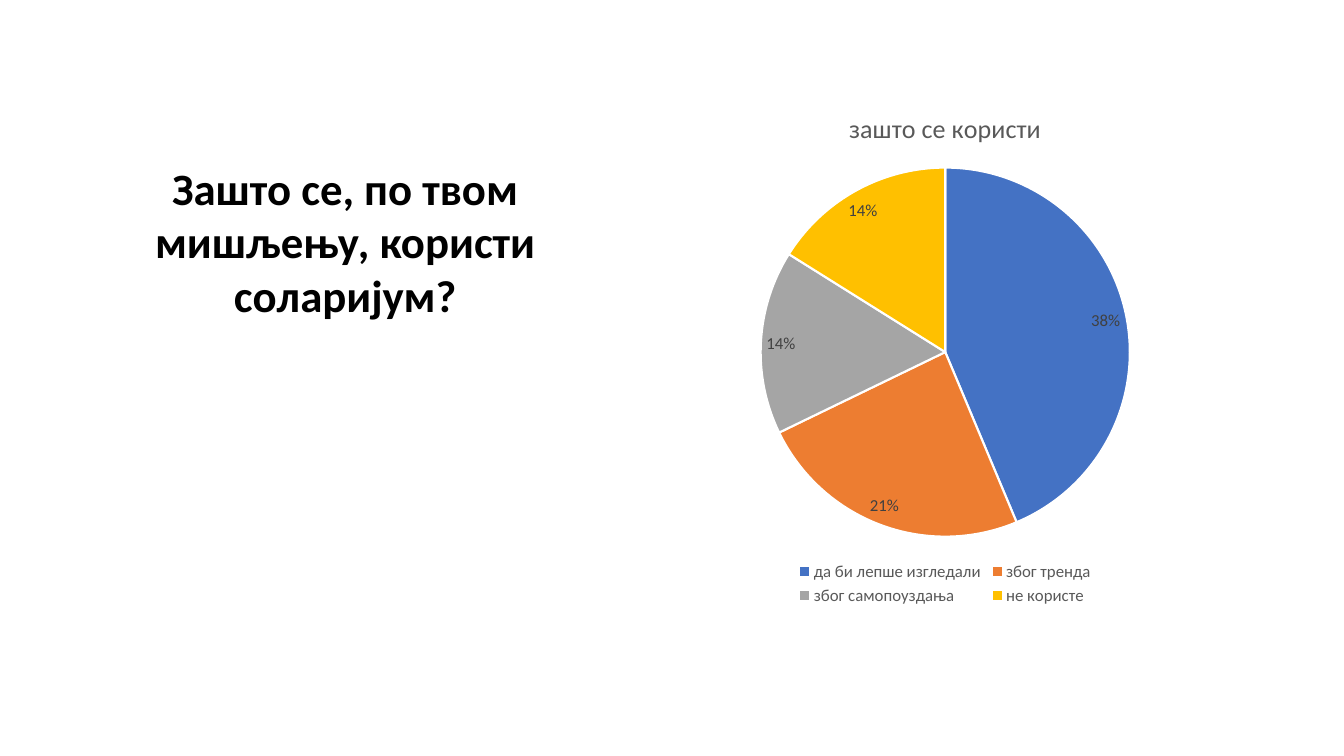
from pptx import Presentation
from pptx.chart.data import CategoryChartData
from pptx.dml.color import RGBColor
from pptx.enum.chart import XL_CHART_TYPE, XL_LABEL_POSITION, XL_LEGEND_POSITION
from pptx.enum.text import MSO_AUTO_SIZE, PP_ALIGN
from pptx.util import Inches, Pt

PIE = XL_CHART_TYPE.PIE
BEST_FIT = XL_LABEL_POSITION.BEST_FIT
BOTTOM = XL_LEGEND_POSITION.BOTTOM
CENTER = PP_ALIGN.CENTER
GROW = MSO_AUTO_SIZE.SHAPE_TO_FIT_TEXT

FONT = "Calibri"
COLORS = {
    "question": "000000",
    "caption": "595959",
    "percent": "404040",
    "white": "FFFFFF",
}
REASONS = [
    ("да би лепше изгледали", 0.38, "4472C4"),
    ("због тренда", 0.21, "ED7D31"),
    ("због самопоуздања", 0.14, "A5A5A5"),
    ("не користе", 0.14, "FFC000"),
]
TOPIC = "зашто се користи"


def style_font(font, size, color, bold=False):
    font.name = FONT
    font.size = Pt(size)
    font.bold = bold
    font.color.rgb = RGBColor.from_string(COLORS[color])


def write_text(frame, text, size, color, bold=False):
    paragraph = frame.paragraphs[0]
    paragraph.alignment = CENTER
    run = paragraph.add_run()
    run.text = text
    style_font(run.font, size, color, bold)


prs = Presentation()
prs.slide_width = Inches(13.33)
prs.slide_height = Inches(7.5)
slide = prs.slides.add_slide(prs.slide_layouts[6])

answers = CategoryChartData(number_format="0%")
answers.categories = [reason for reason, share, color in REASONS]
answers.add_series(TOPIC, [share for reason, share, color in REASONS])
pie = slide.shapes.add_chart(
    PIE, Inches(6.14), Inches(0.89), Inches(6.47), Inches(5.16), answers
).chart
style_font(pie.font, 10, "question")

pie.has_title = True
write_text(pie.chart_title.text_frame, TOPIC, 18.6, "caption")
pie.chart_title.include_in_layout = False

pie.has_legend = True
pie.legend.position = BOTTOM
pie.legend.include_in_layout = False
style_font(pie.legend.font, 12, "caption")

plot = pie.plots[0]
plot.vary_by_categories = True
shares = plot.series[0]
for index, (reason, share, color) in enumerate(REASONS):
    slice_format = shares.points[index].format
    slice_format.fill.solid()
    slice_format.fill.fore_color.rgb = RGBColor.from_string(color)
    slice_format.line.width = Pt(1.5)
    slice_format.line.color.rgb = RGBColor.from_string(COLORS["white"])

percents = shares.data_labels
percents.show_value = True
percents.number_format = "0%"
percents.number_format_is_linked = False
percents.position = BEST_FIT
style_font(percents.font, 12, "percent")

question = slide.shapes.add_textbox(
    Inches(1.09), Inches(1.54), Inches(4.67), Inches(1.72)
).text_frame
question.word_wrap = True
question.auto_size = GROW
write_text(
    question, "Зашто се, по твом мишљењу, користи соларијум?", 32, "question", bold=True
)

prs.save("out.pptx")
